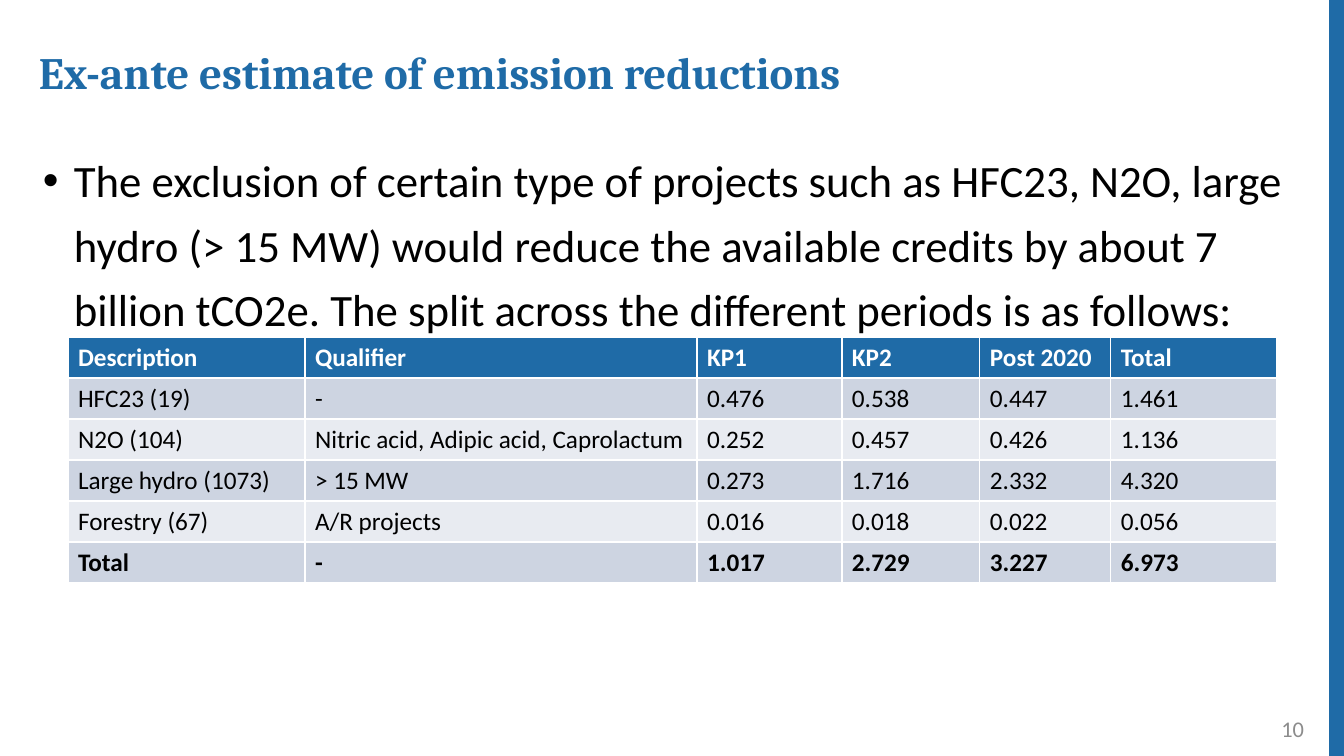
from lxml.etree import SubElement
from pptx import Presentation
from pptx.dml.color import RGBColor
from pptx.enum.shapes import MSO_CONNECTOR
from pptx.enum.text import MSO_ANCHOR, PP_ALIGN
from pptx.oxml.ns import qn
from pptx.util import Pt

TITLE = "Ex-ante estimate of emission reductions"
BODY = ("The exclusion of certain type of projects such as HFC23, N2O, large hydro (> 15 MW) "
        "would reduce the available credits by about 7 billion tCO2e. "
        "The split across the different periods is as follows:")
PAGE = "10"
ROWS = [
    ("Description", "Qualifier", "KP1", "KP2", "Post 2020", "Total"),
    ("HFC23 (19)", "-", "0.476", "0.538", "0.447", "1.461"),
    ("N2O (104)", "Nitric acid, Adipic acid, Caprolactum", "0.252", "0.457", "0.426", "1.136"),
    ("Large hydro (1073)", "> 15 MW", "0.273", "1.716", "2.332", "4.320"),
    ("Forestry (67)", "A/R projects", "0.016", "0.018", "0.022", "0.056"),
    ("Total", "-", "1.017", "2.729", "3.227", "6.973"),
]
COL_WIDTHS = [237, 392, 145, 138, 131, 166]
ROW_HEIGHT = 41
BULLET_INDENT = 31
COLORS = {"blue": "1F6BA7", "white": "FFFFFF", "black": "000000", "gray": "8C8C8C",
          "band_dark": "CDD4E1", "band_light": "E8EBF1"}
W, H = 1344, 756


def px(n):
    return round(n * 914400 / 100.8)


def rgb(name):
    return RGBColor.from_string(COLORS[name])


def write(tf, text, size=18, font="Calibri", color="black", bold=False,
          align=PP_ALIGN.LEFT, spacing=None, bullet=False):
    p = tf.paragraphs[0]
    p.alignment = align
    if spacing:
        p.line_spacing = spacing
    if bullet:
        pPr = p._p.get_or_add_pPr()
        pPr.set("marL", str(px(BULLET_INDENT)))
        pPr.set("indent", str(-px(BULLET_INDENT)))
        SubElement(pPr, qn("a:buFont"), typeface="Arial")
        SubElement(pPr, qn("a:buChar"), char="•")
    r = p.add_run()
    r.text = text
    r.font.size, r.font.name, r.font.bold = Pt(size), font, bold
    r.font.color.rgb = rgb(color)


def add_text(s, box, text, anchor=MSO_ANCHOR.TOP, **fmt):
    tf = s.shapes.add_textbox(*map(px, box)).text_frame
    tf.word_wrap = True
    tf.vertical_anchor = anchor
    write(tf, text, **fmt)


def add_side_bar(s):
    x = px(W - 7)
    bar = s.shapes.add_connector(MSO_CONNECTOR.STRAIGHT, x, 0, x, px(H))
    bar.line.color.rgb = rgb("blue")
    bar.line.width = Pt(12)
    SubElement(bar._element.spPr, qn("a:effectLst"))


def add_credit_table(s, left, top):
    size = px(sum(COL_WIDTHS)), px(ROW_HEIGHT * len(ROWS))
    table = s.shapes.add_table(len(ROWS), len(COL_WIDTHS), px(left), px(top), *size).table
    for col, width in zip(table.columns, COL_WIDTHS):
        col.width = px(width)
    for i, row in enumerate(ROWS):
        table.rows[i].height = px(ROW_HEIGHT)
        header, total = i == 0, i == len(ROWS) - 1
        fill = "blue" if header else "band_dark" if i % 2 else "band_light"
        for j, text in enumerate(row):
            cell = table.cell(i, j)
            cell.fill.solid()
            cell.fill.fore_color.rgb = rgb(fill)
            write(cell.text_frame, text, color="white" if header else "black",
                  bold=header or total)


def main():
    prs = Presentation()
    prs.slide_width, prs.slide_height = px(W), px(H)
    s = prs.slides.add_slide(prs.slide_layouts[6])
    add_side_bar(s)
    add_text(s, (33, 137, 1280, 577), BODY, size=32, spacing=1.2, bullet=True)
    add_text(s, (29, 46, 1206, 58), TITLE, size=32, font="Cambria", color="blue",
             bold=True, spacing=0.9)
    add_text(s, (1012, 709, 302, 40), PAGE, anchor=MSO_ANCHOR.MIDDLE, size=16,
             color="gray", align=PP_ALIGN.RIGHT)
    add_credit_table(s, 68, 337)
    prs.save("out.pptx")


if __name__ == "__main__":
    main()
